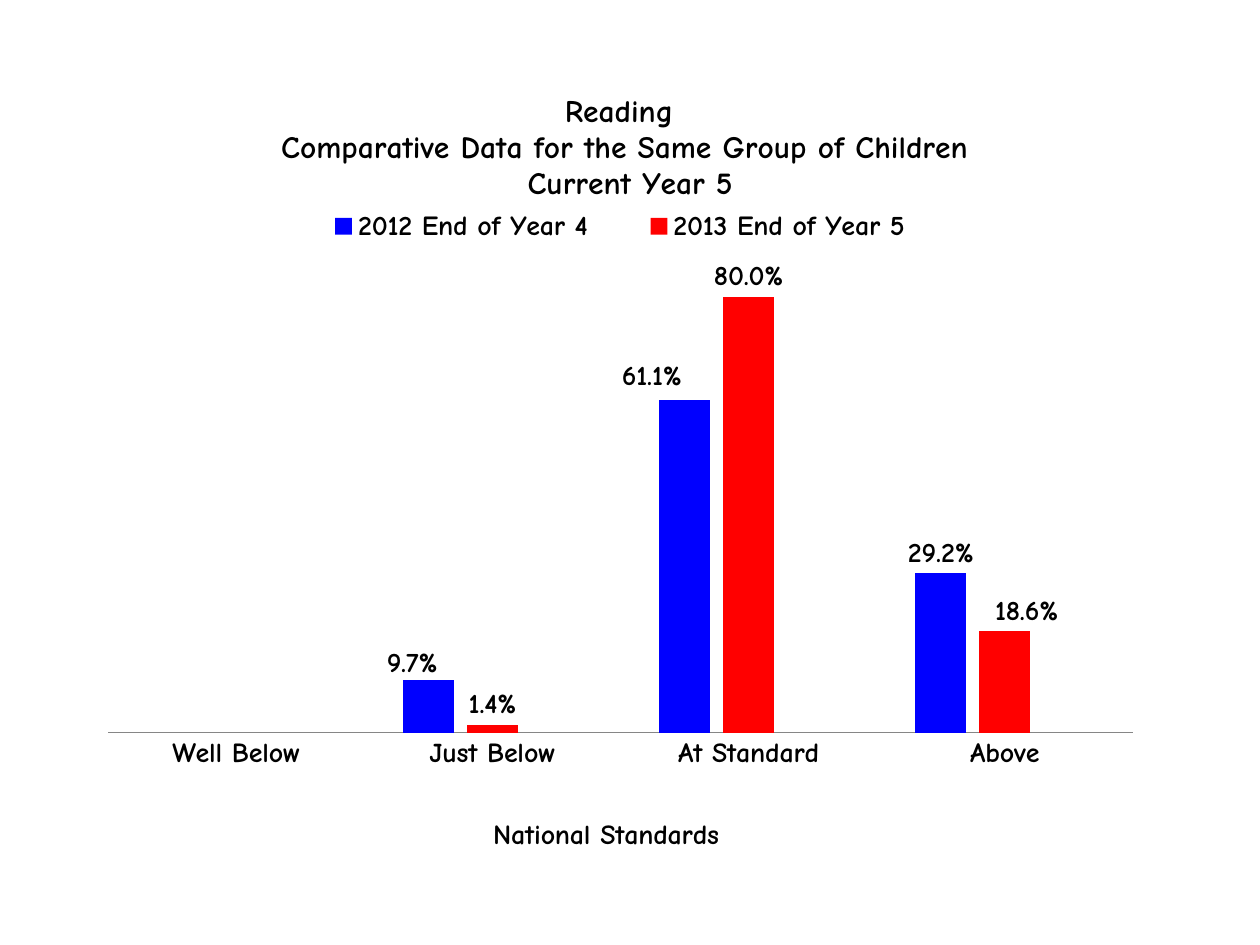
from dataclasses import dataclass

from lxml.etree import QName
from pptx import Presentation
from pptx.chart.data import CategoryChartData
from pptx.dml.color import RGBColor
from pptx.enum.chart import XL_CHART_TYPE, XL_LABEL_POSITION, XL_LEGEND_POSITION, XL_TICK_MARK
from pptx.oxml import parse_xml
from pptx.oxml.ns import nsdecls
from pptx.util import Cm, Pt


@dataclass(frozen=True)
class Theme:
    face: str = "Comic Neue"
    ink: str = "000000"
    axis: str = "868686"
    bars: tuple = ("0000FF", "FF0000", "9BBB59")
    head: int = 18
    text: int = 16


THEME = Theme()
CATS = ("Well Below", "Just Below", "At Standard", "Above")
SERIES = {
    "2012 End of Year 4": (None, 0.097, 0.611, 0.292),
    "2013 End of Year 5": (None, 0.014, 0.8, 0.186),
    "Series 3": (None,) * 4,
}
SHIFTS = {(0, 1): (-0.015, 0.005), (0, 2): (-0.03, -0.004), (1, 3): (0.02, 0)}
TITLE = "Reading \nComparative Data for the Same Group of Children\n Current Year 5"


def style(font, size=THEME.text, color=THEME.ink, bold=True):
    font.name = THEME.face
    font.size = Pt(size)
    font.bold = bold
    font.color.rgb = RGBColor.from_string(color)


def write(frame, text, **form):
    frame.text = text
    for para in frame.paragraphs:
        style(para.font, **form)
        for run in para.runs:
            style(run.font, **form)


def place(host, x, y, w=None, h=None, edge=True, inner=False):
    for old in host.xpath("./c:layout"):
        host.remove(old)
    parts = ['<c:layoutTarget val="inner"/>'] if inner else []
    if edge:
        parts += ['<c:xMode val="edge"/>', '<c:yMode val="edge"/>']
    sizes = {"x": x, "y": y, "w": w, "h": h}
    parts += [f'<c:{key} val="{val}"/>' for key, val in sizes.items() if val is not None]
    first = {"tx", "legendPos", "legendEntry", "idx"}
    index = sum(QName(node).localname in first for node in host)
    host.insert(index, parse_xml(
        f'<c:layout {nsdecls("c")}><c:manualLayout>{"".join(parts)}</c:manualLayout></c:layout>'))


def add_bars(slide):
    data = CategoryChartData(number_format="0.0%")
    data.categories = CATS
    for name, vals in SERIES.items():
        data.add_series(name, vals)
    chart = slide.shapes.add_chart(
        XL_CHART_TYPE.COLUMN_CLUSTERED, Cm(1.5), Cm(1.12), Cm(22), Cm(16.2), data).chart
    style(chart.font)
    plot = chart.plots[0]
    plot.gap_width, plot.overlap = 150, -25
    plot.vary_by_categories = False
    for series, color in zip(plot.series, THEME.bars):
        series.format.fill.solid()
        series.format.fill.fore_color.rgb = RGBColor.from_string(color)
        series.invert_if_negative = False
        add_labels(series.data_labels)
    place(chart.element.xpath(".//c:plotArea")[0], 0.031, 0.235, 0.939, 0.618, inner=True)
    return chart


def add_labels(labels):
    labels.show_value = True
    labels.number_format = "0.0%"
    labels.number_format_is_linked = False
    labels.position = XL_LABEL_POSITION.OUTSIDE_END
    style(labels.font)


def shift_labels(chart):
    for (row, col), (x, y) in SHIFTS.items():
        label = chart.plots[0].series[row].points[col].data_label
        style(label.font)
        label.position = XL_LABEL_POSITION.OUTSIDE_END
        host = chart.element.xpath(f'.//c:ser[c:idx/@val="{row}"]//c:dLbl[c:idx/@val="{col}"]')[0]
        place(host, x, y, edge=False)


def set_axes(chart):
    vals = chart.value_axis
    vals.visible = False
    vals.has_major_gridlines = False
    vals.minimum_scale, vals.maximum_scale = 0, 0.9
    cats = chart.category_axis
    cats.major_tick_mark = XL_TICK_MARK.NONE
    cats.format.line.color.rgb = RGBColor.from_string(THEME.axis)
    style(cats.tick_labels.font)
    write(cats.axis_title.text_frame, "National Standards")
    place(chart.element.xpath(".//c:catAx/c:title")[0], 0.379, 0.952)


def set_legend(chart):
    chart.has_legend = True
    legend = chart.legend
    legend.position = XL_LEGEND_POSITION.TOP
    legend.include_in_layout = False
    style(legend.font)
    host = chart.element.xpath(".//c:legend")[0]
    host.insert(1, parse_xml(
        f'<c:legendEntry {nsdecls("c")}><c:idx val="2"/><c:delete val="1"/></c:legendEntry>'))
    place(host, 0.19, 0.19, 0.62, 0.05)


def set_title(chart):
    chart.has_title = True
    write(chart.chart_title.text_frame, TITLE, size=THEME.head)
    place(chart.element.xpath("./c:chart/c:title")[0], 0.186, 0.04)


def main():
    deck = Presentation()
    deck.slide_width, deck.slide_height = Cm(25.4), Cm(19.05)
    slide = deck.slides.add_slide(deck.slide_layouts[6])
    chart = add_bars(slide)
    shift_labels(chart)
    set_axes(chart)
    set_legend(chart)
    set_title(chart)
    deck.save("out.pptx")


if __name__ == "__main__":
    main()
